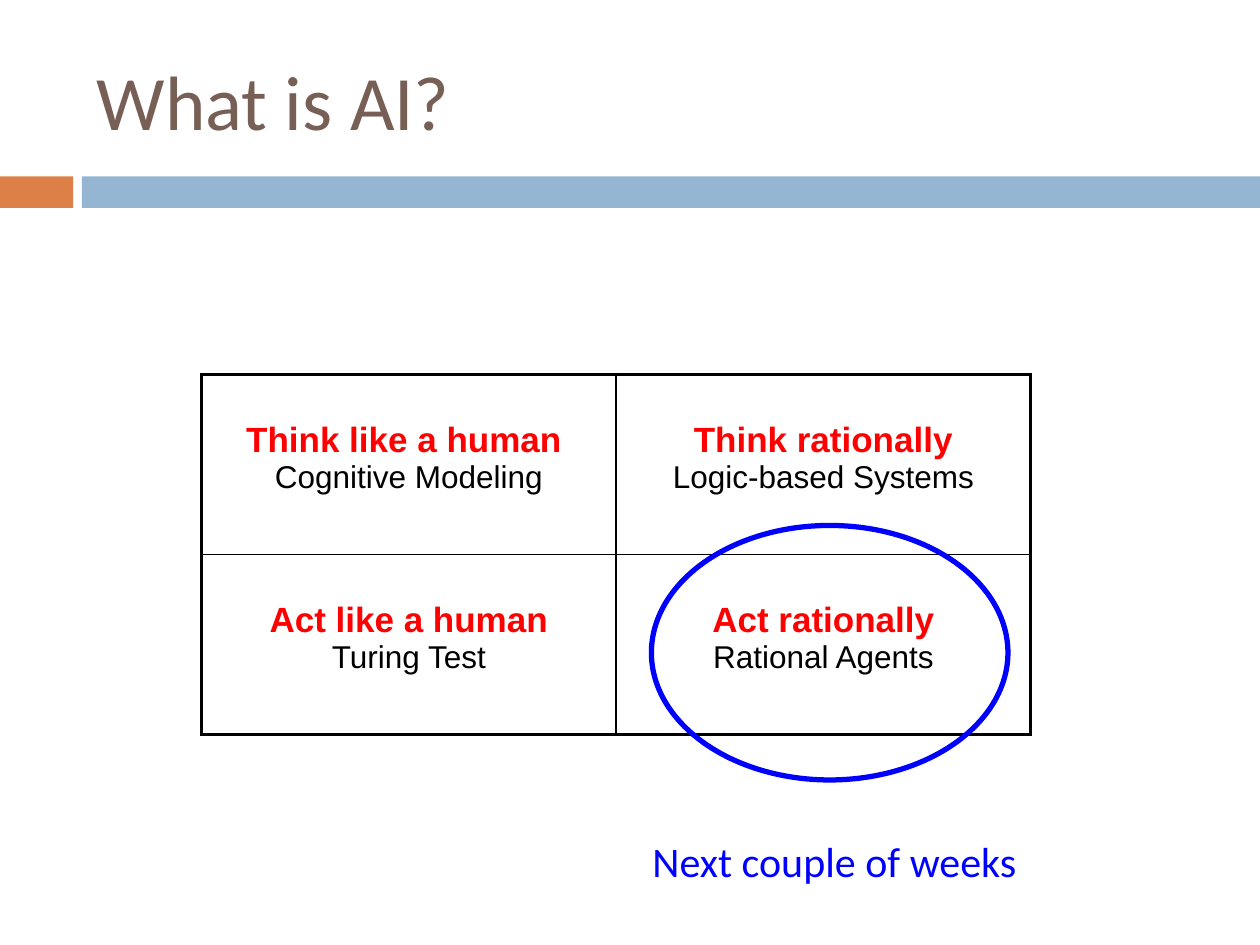
from lxml.etree import SubElement
from pptx import Presentation
from pptx.dml.color import RGBColor
from pptx.enum.shapes import MSO_SHAPE as Shape
from pptx.enum.text import MSO_ANCHOR as Anchor, PP_ALIGN as Align
from pptx.oxml.ns import qn
from pptx.util import Inches, Pt

ORANGE = RGBColor(0xDD, 0x80, 0x47)
LIGHT_BLUE = RGBColor(0x94, 0xB6, 0xD2)
BROWN = RGBColor(0x77, 0x5F, 0x55)
BLUE = RGBColor(0x00, 0x00, 0xFF)
RED = RGBColor(0xFF, 0x00, 0x00)
BLACK = RGBColor(0x00, 0x00, 0x00)

APPROACHES = [
    [("Think like a human ", "Cognitive Modeling"),
     ("Think rationally", "Logic-based Systems")],
    [("Act like a human", "Turing Test"),
     ("Act rationally", "Rational Agents")],
]
GOAL_FORMAT = {"name": "Arial", "size": Pt(20), "bold": True}
FIELD_FORMAT = {"name": "Arial", "size": Pt(18), "bold": False}
OUTER_WIDTH, INNER_WIDTH = Pt(2.25), Pt(1)


def add_run(paragraph, text, font_format, color):
    run = paragraph.add_run()
    run.text = text
    for attribute, value in font_format.items():
        setattr(run.font, attribute, value)
    run.font.color.rgb = color


def add_bar(slide, left, width, color):
    bar = slide.shapes.add_shape(
        Shape.RECTANGLE, Inches(left), Inches(1.4), Inches(width), Inches(0.25))
    bar.shadow.inherit = False
    bar.fill.solid()
    bar.fill.fore_color.rgb = color
    bar.line.fill.background()


def add_label(slide, bounds, text, size, color, frame_format):
    label = slide.shapes.add_textbox(*map(Inches, bounds))
    for attribute, value in frame_format.items():
        setattr(label.text_frame, attribute, value)
    add_run(label.text_frame.paragraphs[0], text,
            {"name": "Calibri", "size": Pt(size)}, color)


def set_borders(cell, widths):
    """Draw black cell borders; widths maps a:lnL, a:lnR, a:lnT, a:lnB in that order."""
    properties = cell._tc.get_or_add_tcPr()
    for position, (tag, width) in enumerate(widths.items()):
        border = SubElement(properties, qn(tag), w=str(width))
        fill = SubElement(border, qn("a:solidFill"))
        SubElement(fill, qn("a:srgbClr"), val=str(BLACK))
        properties.insert(position, border)


def add_approach_table(slide):
    rows, columns = len(APPROACHES), len(APPROACHES[0])
    table = slide.shapes.add_table(
        rows, columns, Inches(1.6), Inches(2.97), Inches(6.58), Inches(2.86)).table
    for r, approaches in enumerate(APPROACHES):
        for c, (goal, field) in enumerate(approaches):
            cell = table.cell(r, c)
            cell.fill.background()
            cell.margin_top = Inches(0.37)
            on_edge = {"a:lnL": c == 0, "a:lnR": c == columns - 1,
                       "a:lnT": r == 0, "a:lnB": r == rows - 1}
            set_borders(cell, {tag: OUTER_WIDTH if outer else INNER_WIDTH
                               for tag, outer in on_edge.items()})
            goal_line = cell.text_frame.paragraphs[0]
            field_line = cell.text_frame.add_paragraph()
            goal_line.alignment = field_line.alignment = Align.CENTER
            add_run(goal_line, goal, GOAL_FORMAT, RED)
            add_run(field_line, field, FIELD_FORMAT, BLACK)


def add_highlight(slide):
    highlight = slide.shapes.add_shape(
        Shape.OVAL, Inches(5.17), Inches(4.17), Inches(2.83), Inches(2.02))
    highlight.shadow.inherit = False
    highlight.fill.background()
    highlight.line.color.rgb = BLUE
    highlight.line.width = Pt(3)


def main():
    presentation = Presentation()
    presentation.slide_width, presentation.slide_height = Inches(10), Inches(7.5)
    slide = presentation.slides.add_slide(presentation.slide_layouts[6])
    add_bar(slide, 0, 0.58, ORANGE)
    add_bar(slide, 0.65, 9.35, LIGHT_BLUE)
    add_approach_table(slide)
    add_label(slide, (0.67, 0.25, 8.92, 1.08), "What is AI?", 44, BROWN,
              {"word_wrap": True, "vertical_anchor": Anchor.MIDDLE})
    add_highlight(slide)
    add_label(slide, (5.08, 6.58, 3.1, 0.5), "Next couple of weeks", 24, BLUE,
              {"word_wrap": False})
    presentation.save("out.pptx")


if __name__ == "__main__":
    main()
